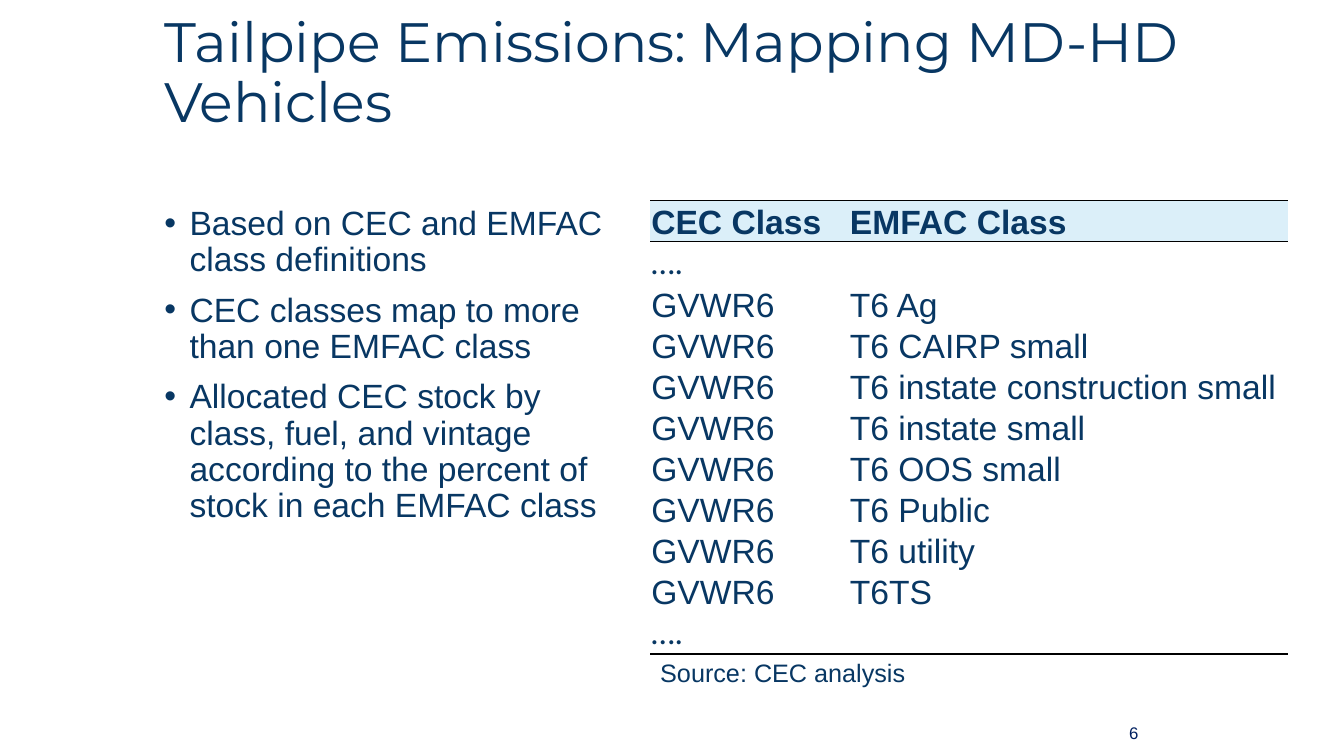
from lxml.etree import SubElement
from pptx import Presentation
from pptx.dml.color import RGBColor
from pptx.enum.text import MSO_ANCHOR as Anchor, MSO_AUTO_SIZE as AutoSize, PP_ALIGN as Align
from pptx.oxml import parse_xml
from pptx.oxml.ns import nsdecls, qn
from pptx.util import Inches, Pt

COLORS = {"text": "083763", "number": "002060", "header": "DBEFF9", "rule": "000000"}
NO_STYLE = "{2D5ABB26-0587-4C30-8999-92F81FD0307C}"
BULLETS = [
    "Based on CEC and EMFAC class definitions",
    "CEC classes map to more than one EMFAC class",
    "Allocated CEC stock by class, fuel, and vintage according to the percent of stock in each EMFAC class",
]
EMFAC_CLASSES = [
    "T6 Ag", "T6 CAIRP small", "T6 instate construction small", "T6 instate small",
    "T6 OOS small", "T6 Public", "T6 utility", "T6TS",
]
CLASS_ROWS = [
    ("CEC Class", "EMFAC Class"),
    ("….", ""),
    *[("GVWR6", emfac_class) for emfac_class in EMFAC_CLASSES],
    ("….", ""),
]


def write(paragraph, text, size=24, font="Arial", color="text", bold=False,
          align=Align.LEFT, spacing=1.0, before=0, bullet=False):
    if bullet:
        properties = paragraph._p.get_or_add_pPr()
        properties.set("marL", str(Inches(0.25)))
        properties.set("indent", str(Inches(-0.25)))
        SubElement(properties, qn("a:buFont"), typeface="Arial")
        SubElement(properties, qn("a:buChar"), char="•")
    paragraph.alignment = align
    paragraph.line_spacing = spacing
    paragraph.space_before = Pt(before)
    run = paragraph.add_run()
    run.text = text
    run.font.size = Pt(size)
    run.font.name = font
    run.font.bold = bold
    run.font.color.rgb = RGBColor.from_string(COLORS[color])


def place(shape, left, top, width, height):
    shape.left, shape.top = Inches(left), Inches(top)
    shape.width, shape.height = Inches(width), Inches(height)
    shape.text_frame.word_wrap = True
    shape.text_frame.auto_size = AutoSize.NONE


def add_title(slide, left, top, width, height):
    title = slide.shapes.title
    place(title, left, top, width, height)
    title.text_frame.vertical_anchor = Anchor.MIDDLE
    write(title.text_frame.paragraphs[0], "Tailpipe Emissions: Mapping MD-HD Vehicles",
          size=39.6, font="Montserrat", spacing=0.9)


def add_bullets(slide, left, top, width, height):
    body = slide.placeholders[1]
    place(body, left, top, width, height)
    frame = body.text_frame
    for index, text in enumerate(BULLETS):
        paragraph = frame.add_paragraph() if index else frame.paragraphs[0]
        write(paragraph, text, spacing=0.9, before=10 if index else 0, bullet=True)


def add_rule(cell, side):
    cell._tc.get_or_add_tcPr().insert(0, parse_xml(
        f'<a:{side} {nsdecls("a")} w="{Pt(1)}"><a:solidFill>'
        f'<a:srgbClr val="{COLORS["rule"]}"/></a:solidFill></a:{side}>'))


def add_class_table(slide, left, top, width, height):
    first_width = 1.97
    frame = slide.shapes.add_table(len(CLASS_ROWS), 2, Inches(left), Inches(top),
                                   Inches(width), Inches(height))
    table = frame.table
    table.first_row = table.horz_banding = False
    table._tbl.tblPr.find(qn("a:tableStyleId")).text = NO_STYLE
    table.columns[0].width = Inches(first_width)
    table.columns[1].width = Inches(width - first_width)
    last = len(CLASS_ROWS) - 1
    for row, texts in enumerate(CLASS_ROWS):
        table.rows[row].height = Inches(height / len(CLASS_ROWS))
        for column, text in enumerate(texts):
            cell = table.cell(row, column)
            cell.margin_left = cell.margin_right = cell.margin_top = Inches(0.01)
            cell.margin_bottom = 0
            cell.vertical_anchor = Anchor.BOTTOM
            if text:
                write(cell.text_frame.paragraphs[0], text, bold=row == 0,
                      font="Calibri" if text == "…." else "Arial")
            if row == 0:
                cell.fill.solid()
                cell.fill.fore_color.rgb = RGBColor.from_string(COLORS["header"])
            else:
                cell.fill.background()
            if row in (0, last):
                add_rule(cell, "lnB")
            if row == 0:
                add_rule(cell, "lnT")


def add_label(slide, text, left, top, width, height, anchor=Anchor.TOP, **text_format):
    label = slide.shapes.add_textbox(0, 0, 0, 0)
    place(label, left, top, width, height)
    label.text_frame.vertical_anchor = anchor
    write(label.text_frame.paragraphs[0], text, **text_format)


def main():
    presentation = Presentation()
    presentation.slide_width = Inches(13.33)
    presentation.slide_height = Inches(7.5)
    slide = presentation.slides.add_slide(presentation.slide_layouts[1])
    add_title(slide, 1.53, 0.17, 10.89, 1.14)
    add_bullets(slide, 1.53, 2, 4.56, 4.76)
    add_class_table(slide, 6.45, 1.99, 6.32, 4.48)
    add_label(slide, "Source: CEC analysis", 6.45, 6.47, 3.13, 0.4, size=18)
    add_label(slide, "6", 9.42, 7.07, 1.97, 0.4, anchor=Anchor.MIDDLE,
              size=12, color="number", align=Align.RIGHT)
    presentation.save("out.pptx")


if __name__ == "__main__":
    main()
